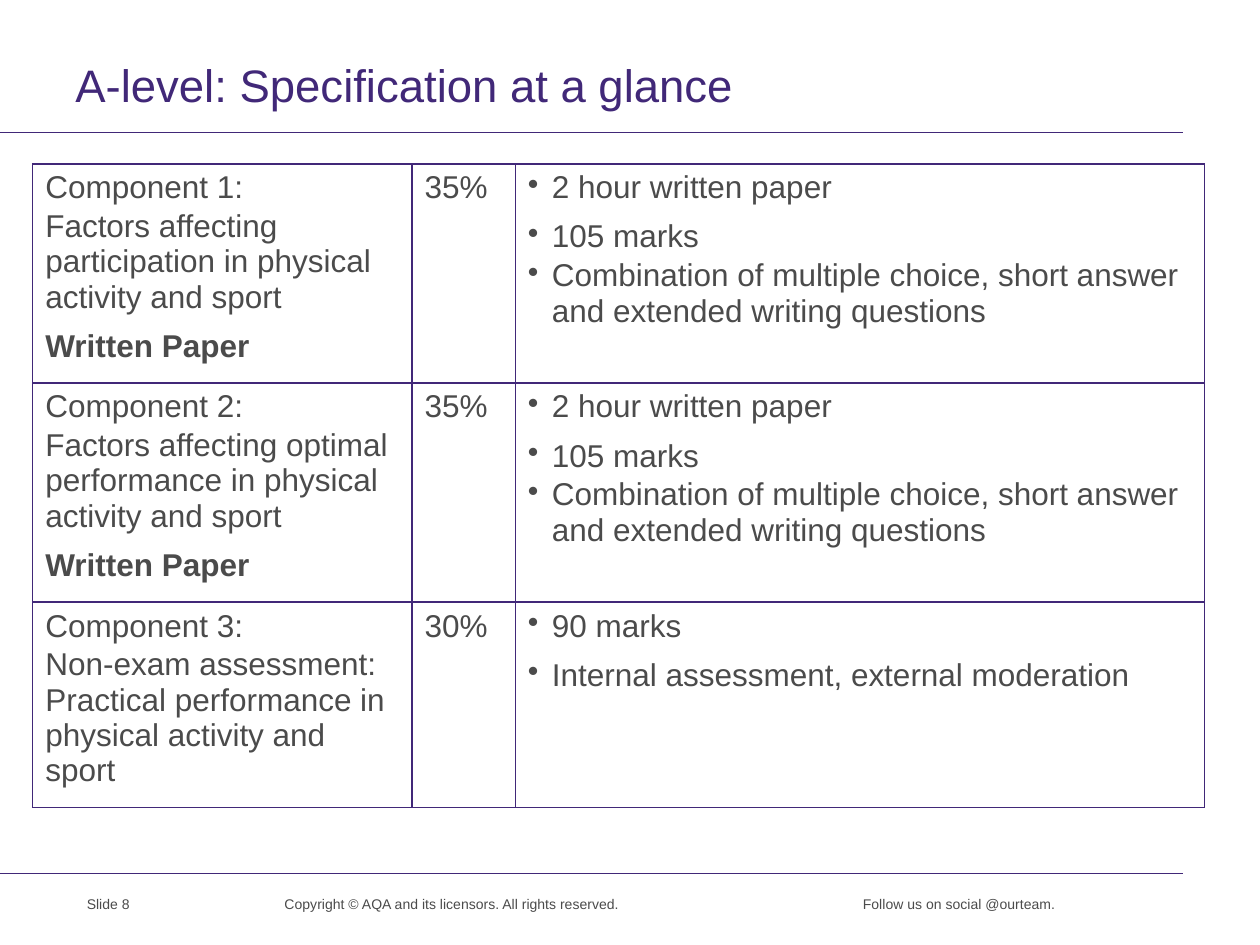
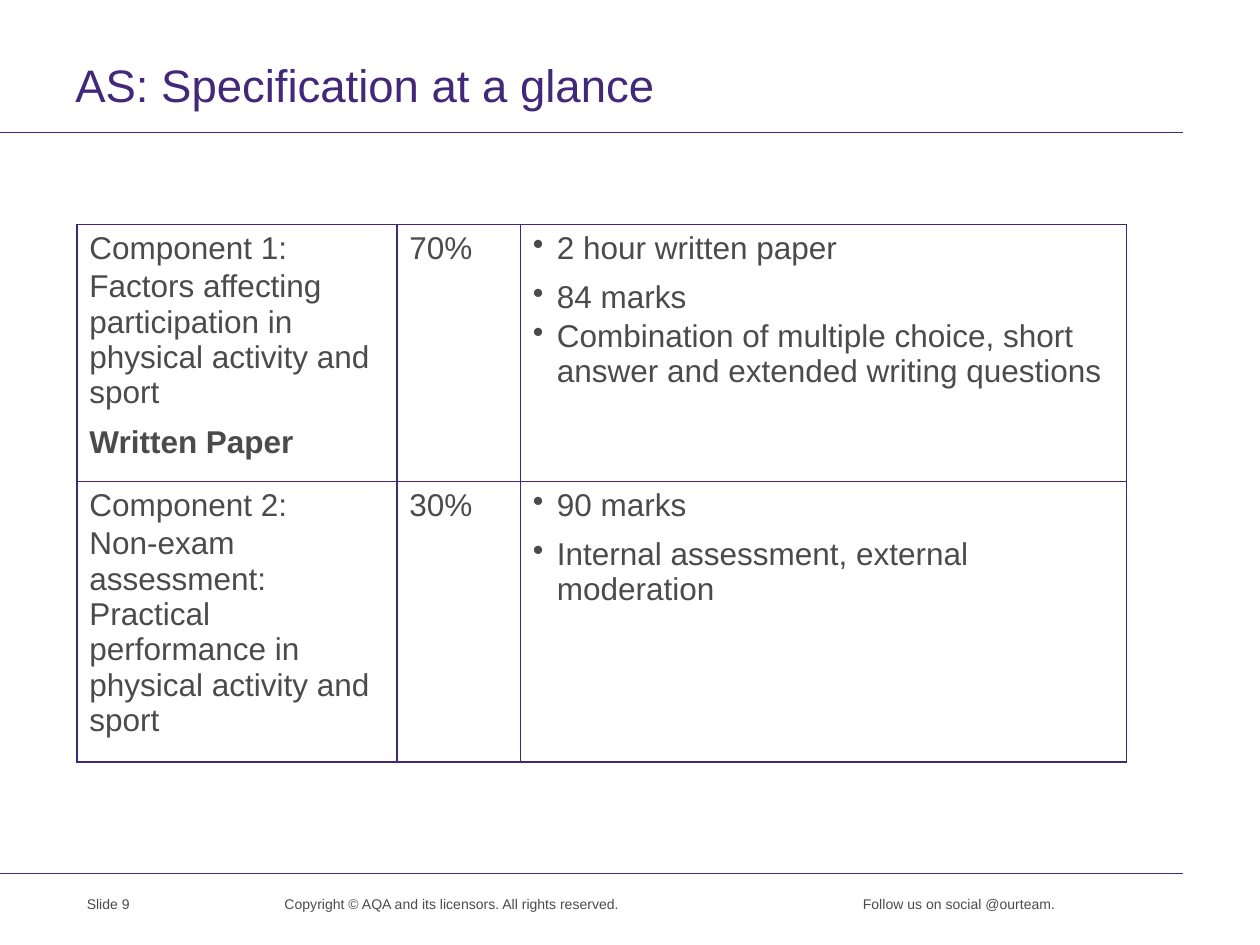
from dataclasses import dataclass

from lxml import etree
from pptx import Presentation
from pptx.dml.color import RGBColor
from pptx.enum.shapes import MSO_CONNECTOR
from pptx.oxml.ns import qn
from pptx.util import Inches, Pt

STRAIGHT = MSO_CONNECTOR.STRAIGHT
EDGES = ("a:lnL", "a:lnR", "a:lnT", "a:lnB")


@dataclass(frozen=True)
class Theme:
    font: str = "Arial"
    purple: str = "412878"
    grey: str = "4B4B4B"
    title: int = 26
    body: int = 18
    small: int = 8
    lead: int = 2
    gap: int = 6
    rule: float = 0.6
    edge: int = 1


def solid(parent, tag, color, **attrs):
    """Add an XML element that holds a plain colour."""
    node = etree.SubElement(parent, qn(tag), **attrs)
    if tag != "a:buClr":
        node = etree.SubElement(node, qn("a:solidFill"))
    etree.SubElement(node, qn("a:srgbClr"), val=color)


class Deck:
    def __init__(self, theme):
        self.theme = theme
        self.prs = Presentation()
        self.prs.slide_width = Inches(10)
        self.prs.slide_height = Inches(7.5)
        self.slide = None

    def page(self, title, number):
        """Start a slide with its title, rules and footer."""
        look = self.theme
        self.slide = self.prs.slides.add_slide(self.prs.slide_layouts[6])
        for y in (1.05, 6.93):
            self.line(y)
        head = self.text(title, 0.5, 0.45, 9.5, 0.48, look.title, look.purple)
        head.line_spacing = Pt(28)
        foot = (
            (f"Slide {number}", 0.59, 0.71),
            ("Copyright © AQA and its licensors. All rights reserved.", 2.16, 2.93),
            ("Follow us on social @ourteam.", 6.75, 2.71),
        )
        for words, x, width in foot:
            self.text(words, x, 7.06, width, 0.26, look.small, look.grey)

    def line(self, y):
        rule = self.slide.shapes.add_connector(
            STRAIGHT, 0, Inches(y), Inches(9.39), Inches(y))
        rule.line.color.rgb = RGBColor.from_string(self.theme.purple)
        rule.line.width = Pt(self.theme.rule)
        etree.SubElement(rule._element.spPr, qn("a:effectLst"))

    def style(self, para, size, color, bold=False):
        font = para.font
        font.name = self.theme.font
        font.size = Pt(size)
        font.bold = bold
        font.color.rgb = RGBColor.from_string(color)

    def text(self, words, x, y, width, height, size, color):
        box = self.slide.shapes.add_textbox(
            Inches(x), Inches(y), Inches(width), Inches(height))
        box.text_frame.word_wrap = True
        para = box.text_frame.paragraphs[0]
        para.text = words
        self.style(para, size, color)
        return para

    def table(self, x, y, widths, rows):
        """Draw rows of (name, topic, paper, share, points)."""
        high = 1.57
        frame = self.slide.shapes.add_table(
            len(rows), len(widths), Inches(x), Inches(y),
            Inches(sum(widths)), Inches(high * len(rows)))
        grid = frame.table
        grid.first_row = grid.horz_banding = False
        for col, width in zip(grid.columns, widths):
            col.width = Inches(width)
        for r, (name, topic, paper, share, points) in enumerate(rows):
            grid.rows[r].height = Inches(high)
            unit = [name, topic] + ([paper] if paper else [])
            self.cell(grid.cell(r, 0), unit, wide=1, bold=2)
            self.cell(grid.cell(r, 1), [share])
            self.cell(grid.cell(r, 2), points, wide=0, bullet=True)

    def cell(self, cell, lines, wide=None, bold=None, bullet=False):
        """Fill a cell; wide and bold are the indexes of special lines."""
        look = self.theme
        props = cell._tc.get_or_add_tcPr()
        for tag in EDGES:
            solid(props, tag, look.purple, w=str(Pt(look.edge)))
        cell.fill.background()
        frame = cell.text_frame
        for i, words in enumerate(lines):
            para = frame.add_paragraph() if i else frame.paragraphs[0]
            para.text = words
            if i:
                para.space_before = Pt(look.lead)
            if i == wide and i < len(lines) - 1:
                para.space_after = Pt(look.gap)
            if bullet:
                self.bullet(para)
            self.style(para, look.body, look.grey, i == bold)

    def bullet(self, para):
        props = para._p.get_or_add_pPr()
        step = Inches(0.19)
        props.set("marL", str(step))
        props.set("indent", str(-step))
        solid(props, "a:buClr", self.theme.grey)
        etree.SubElement(props, qn("a:buChar"), char="•")


def main():
    deck = Deck(Theme())
    paper = "Written Paper"
    join = "Factors affecting participation in physical activity and sport"
    best = "Factors affecting optimal performance in physical activity and sport"
    task = ("Non-exam assessment: Practical performance in physical "
            "activity and sport")
    mixed = ("Combination of multiple choice, short answer and extended "
             "writing questions")
    exam = ["2 hour written paper", "105 marks", mixed]
    short = ["2 hour written paper", "84 marks", mixed]
    course = ["90 marks", "Internal assessment, external moderation"]

    deck.page("A-level: Specification at a glance", 8)
    deck.table(0.26, 1.3, (3.01, 0.82, 5.47), [
        ("Component 1:", join, paper, "35%", exam),
        ("Component 2:", best, paper, "35%", exam),
        ("Component 3:", task, None, "30%", course),
    ])

    deck.page("AS: Specification at a glance", 9)
    deck.table(0.61, 1.78, (2.54, 0.98, 4.81), [
        ("Component 1:", join, paper, "70%", short),
        ("Component 2:", task, None, "30%", course),
    ])
    deck.prs.save("out.pptx")


if __name__ == "__main__":
    main()
